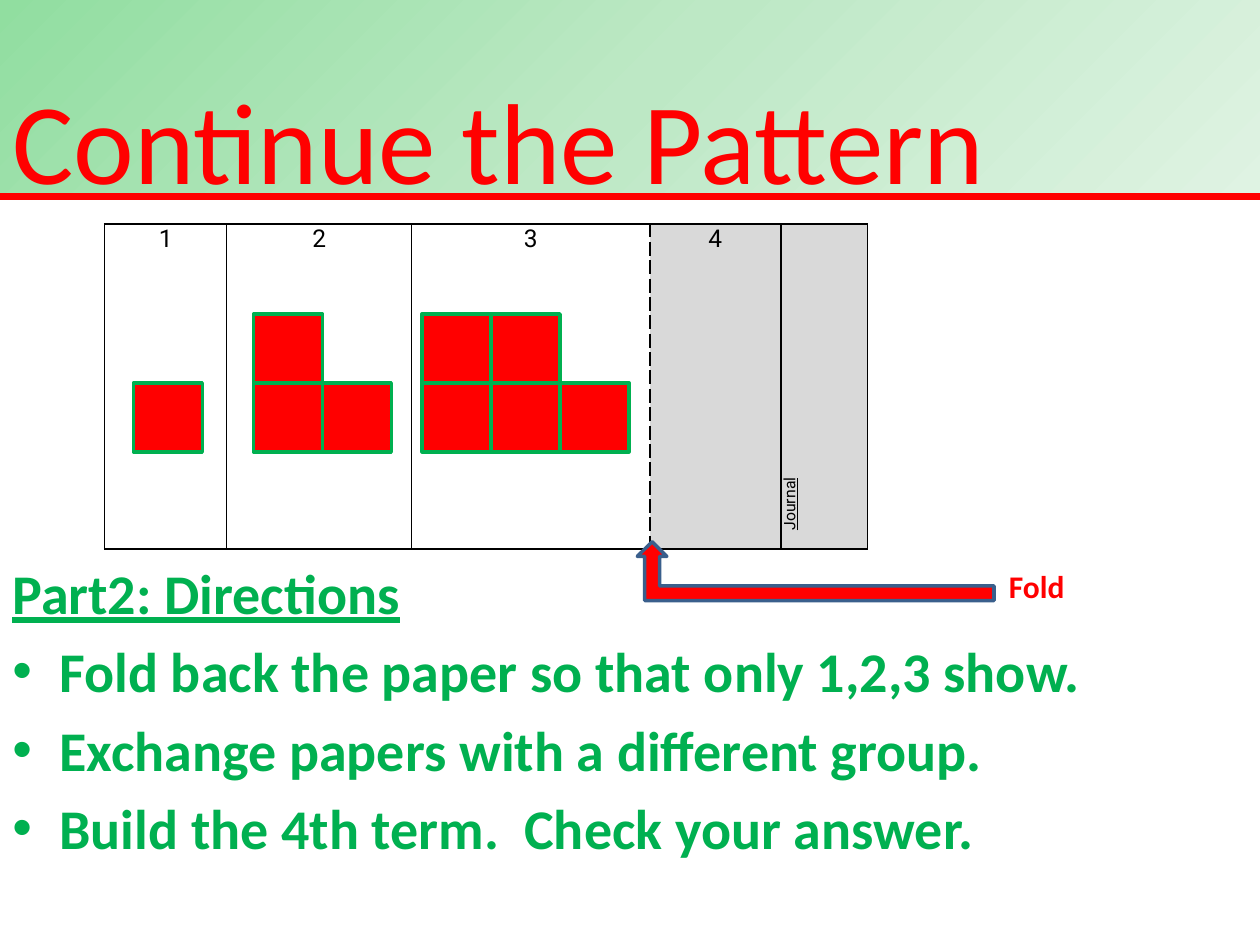
from copy import deepcopy
from dataclasses import dataclass

from lxml.etree import SubElement
from pptx import Presentation
from pptx.dml.color import RGBColor
from pptx.enum.shapes import MSO_CONNECTOR as CONN, MSO_SHAPE as SHAPE
from pptx.enum.text import MSO_ANCHOR as ANCHOR, MSO_AUTO_SIZE as AUTO, PP_ALIGN as ALIGN
from pptx.oxml import parse_xml
from pptx.oxml.ns import nsdecls, qn
from pptx.util import Cm, Pt

RED, GREEN, BLUE, BLACK, GREY = "FF0000", "00B050", "3A5F8C", "000000", "D9D9D9"
SQUARE = 1.39
BASE_Y = 7.72
HEADER_H = 3.96
HANGING = 0.95


@dataclass
class Panel:
    label: str
    width: float
    fill: str = ""
    dashed_side: str = ""
    vertical: bool = False


@dataclass
class Term:
    """Squares standing on the base line, given as the height of each column."""
    left: float
    heights: tuple[int, ...]


PANELS = [
    Panel("1", 2.46),
    Panel("2", 3.73),
    Panel("3", 4.8, dashed_side="R"),
    Panel("4", 2.64, GREY, dashed_side="L"),
    Panel("Journal", 1.75, GREY, vertical=True),
]
TERMS = [Term(2.69, (1,)), Term(5.11, (2, 1)), Term(8.51, (2, 2, 1))]
STEPS = [
    "Fold back the paper so that only 1,2,3 show.",
    "Exchange papers with a different group.",
    "Build the 4th term.  Check your answer.",
]


def rgb(color: str) -> RGBColor:
    return RGBColor.from_string(color)


def add_run(p, text: str, color: str, **formats) -> None:
    r = p.add_run()
    r.text = text
    r.font.color.rgb = rgb(color)
    for name, value in formats.items():
        setattr(r.font, name, value)


def add_text_box(slide, left: float, top: float, width: float, height: float):
    tf = slide.shapes.add_textbox(Cm(left), Cm(top), Cm(width), Cm(height)).text_frame
    tf.word_wrap = True
    return tf


def add_red_shape(slide, kind, left: float, top: float, width: float, height: float, line: str):
    s = slide.shapes.add_shape(kind, Cm(left), Cm(top), Cm(width), Cm(height))
    s.shadow.inherit = False
    s.fill.solid()
    s.fill.fore_color.rgb = rgb(RED)
    s.line.color.rgb = rgb(line)
    s.line.width = Pt(2)
    return s


def format_title(title) -> None:
    title.left, title.top, title.width, title.height = Cm(0), Cm(0), Cm(25.4), Cm(HEADER_H)
    fill = title.fill
    fill.gradient()
    fill.gradient_angle = 315
    stops = title._element.spPr.find(".//" + qn("a:gsLst"))
    stops.insert(1, deepcopy(stops[0]))
    for stop, (position, color) in zip(
        fill.gradient_stops, [(0, "91DEA0"), (0.5, "BDE8C5"), (1, "DFF3E3")]
    ):
        stop.position = position
        stop.color.rgb = rgb(color)
    tf = title.text_frame
    formats = dict(auto_size=AUTO.NONE, word_wrap=True, vertical_anchor=ANCHOR.MIDDLE,
                   margin_top=Cm(1.63), margin_bottom=0)
    for name, value in formats.items():
        setattr(tf, name, value)
    p = tf.paragraphs[0]
    p.alignment = ALIGN.LEFT
    add_run(p, "Continue the Pattern", RED, name="Calibri", size=Pt(65.7))


def add_directions(slide) -> None:
    tf = add_text_box(slide, 0, 11.13, 23.7, 7.92)
    for i, text in enumerate(["Part2: Directions", *STEPS]):
        p = tf.add_paragraph() if i else tf.paragraphs[0]
        p.space_before = Pt(6.4)
        pPr = p._p.get_or_add_pPr()
        pPr.set("marL", str(Cm(HANGING)))
        pPr.set("indent", str(-Cm(HANGING)))
        if i:
            SubElement(pPr, qn("a:buFont"), typeface="Arial")
            SubElement(pPr, qn("a:buChar"), char="•")
        add_run(p, text, GREEN, name="Calibri", size=Pt(32), bold=True, underline=i == 0)


def set_borders(cell, dashed_side: str) -> None:
    tcPr = cell._tc.get_or_add_tcPr()
    for i, side in enumerate("LRTB"):
        dash = "dash" if side == dashed_side else "solid"
        tcPr.insert(i, parse_xml(
            f'<a:ln{side} {nsdecls("a")} w="{Pt(1)}"><a:solidFill><a:srgbClr val="{BLACK}"/>'
            f'</a:solidFill><a:prstDash val="{dash}"/></a:ln{side}>'))


def add_panels(slide) -> None:
    width = sum(panel.width for panel in PANELS)
    table = slide.shapes.add_table(
        1, len(PANELS), Cm(2.11), Cm(4.52), Cm(width), Cm(6.55)).table
    table.first_row = table.horz_banding = False
    for column, cell, panel in zip(table.columns, table.rows[0].cells, PANELS):
        column.width = Cm(panel.width)
        cell.margin_left = cell.margin_right = Cm(0.18)
        cell.margin_top = cell.margin_bottom = 0
        if panel.fill:
            cell.fill.solid()
            cell.fill.fore_color.rgb = rgb(panel.fill)
        else:
            cell.fill.background()
        set_borders(cell, panel.dashed_side)
        p = cell.text_frame.paragraphs[0]
        if panel.vertical:
            cell._tc.tcPr.set("vert", "vert270")
            p._p.get_or_add_pPr().set("marL", str(Cm(0.2)))
        else:
            p.alignment = ALIGN.CENTER
        add_run(p, panel.label, BLACK, name="Roboto",
                size=Pt(9 if panel.vertical else 14), underline=panel.vertical)


def add_term(slide, term: Term) -> None:
    for column, height in enumerate(term.heights):
        for level in range(height):
            add_red_shape(slide, SHAPE.RECTANGLE, term.left + column * SQUARE,
                          BASE_Y - level * SQUARE, SQUARE, SQUARE, GREEN)


def add_header_rule(slide) -> None:
    rule = slide.shapes.add_connector(
        CONN.STRAIGHT, Cm(0), Cm(HEADER_H), Cm(25.4), Cm(HEADER_H))
    rule.line.color.rgb = rgb(RED)
    rule.line.width = Pt(4)
    SubElement(rule._element.spPr, qn("a:effectLst"))


def add_fold_mark(slide) -> None:
    arrow = add_red_shape(slide, SHAPE.BENT_UP_ARROW, 12.85, 10.92, 7.19, 1.19, BLUE)
    arrow._element.spPr.xfrm.set("flipH", "1")
    tf = add_text_box(slide, 20.09, 11.3, 1.8, 1.02)
    add_run(tf.paragraphs[0], "Fold", RED, name="Calibri", size=Pt(18), bold=True)


def main() -> None:
    prs = Presentation()
    prs.slide_width, prs.slide_height = Cm(25.4), Cm(19.05)
    slide = prs.slides.add_slide(prs.slide_layouts[5])
    format_title(slide.shapes.title)
    add_directions(slide)
    add_header_rule(slide)
    add_panels(slide)
    for term in TERMS:
        add_term(slide, term)
    add_fold_mark(slide)
    prs.save("out.pptx")


if __name__ == "__main__":
    main()
